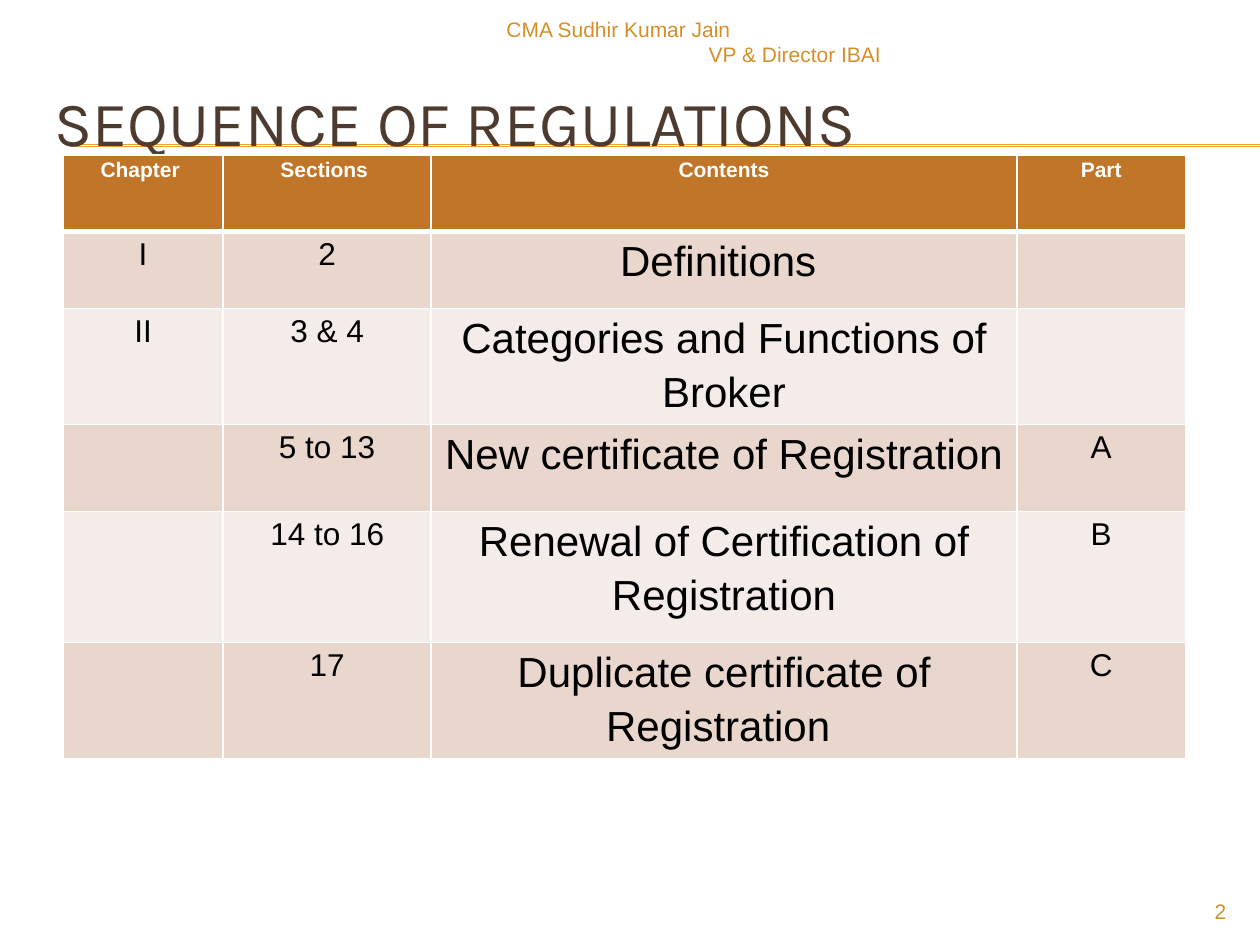
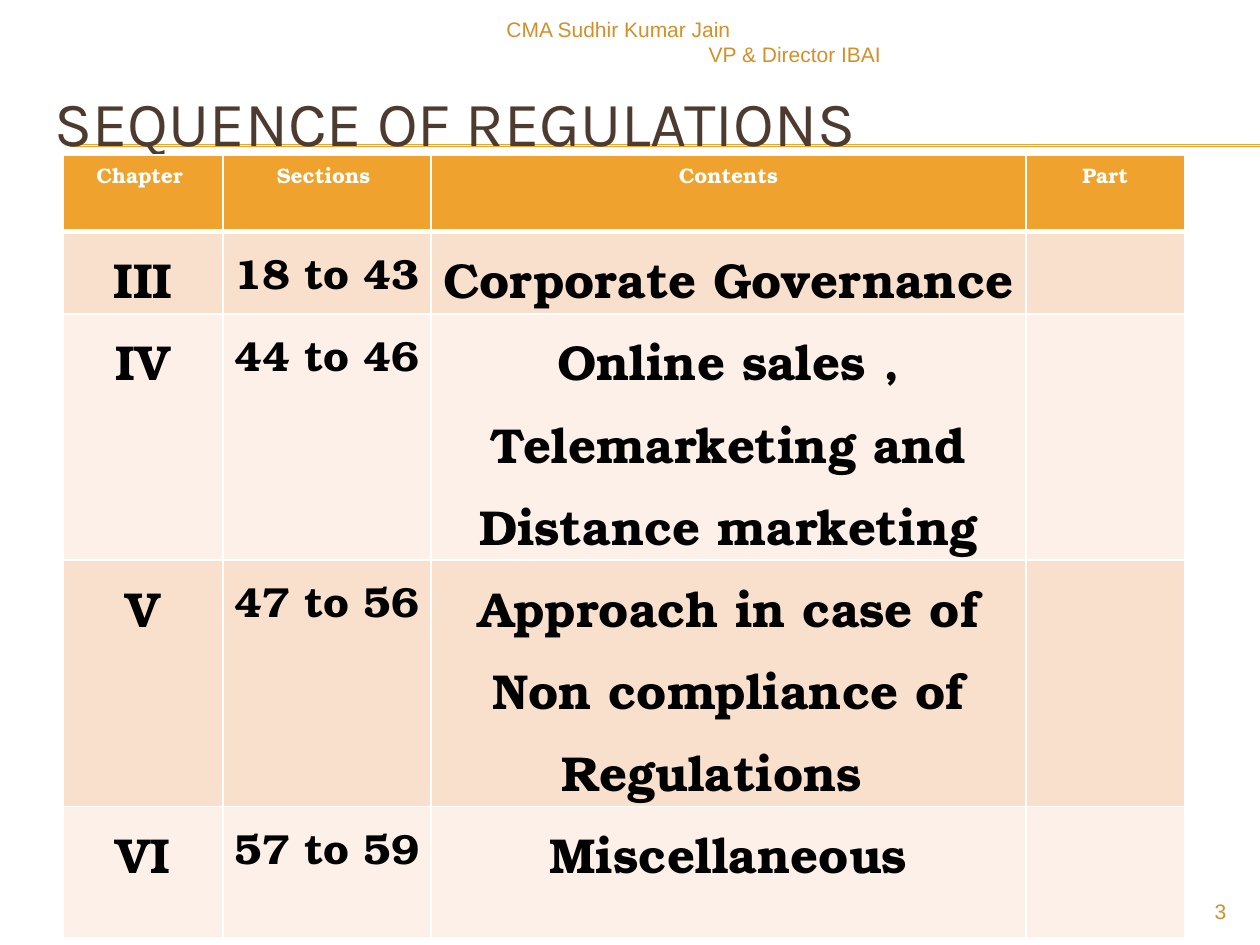
from dataclasses import dataclass

import lxml.etree
import pptx
import pptx.dml.color
import pptx.enum.shapes
import pptx.enum.text
import pptx.oxml.ns
import pptx.util

Cm = pptx.util.Cm
Pt = pptx.util.Pt
Align = pptx.enum.text.PP_ALIGN

COLORS = {
    "title": "4E3B30",
    "rule": "F0A22E",
    "presenter": "D48F29",
    "number": "D38E27",
    "white": "FFFFFF",
    "black": "000000",
    "brown": "C17529",
    "brown_dark_band": "E9D6CD",
    "brown_light_band": "F4ECE8",
    "orange": "F0A22E",
    "orange_dark_band": "F9E0CD",
    "orange_light_band": "FCF0E8",
}
TITLE = "SEQUENCE OF REGULATIONS"
PRESENTER_LINES = (("CMA Sudhir Kumar Jain", Align.LEFT), ("VP & Director IBAI", Align.RIGHT))
HEADINGS = ("Chapter ", "Sections ", "Contents", "Part")
RULE_TOPS = (2.92, 2.95)
HEADER_SIZE = 12
LINE_SPACING = 1.15
CELL_INSET = 0.18


@dataclass(frozen=True)
class TextStyle:
    font: str
    size: float
    color: str
    bold: bool = False


@dataclass(frozen=True)
class RegulationTable:
    number: int
    theme: str
    font: str
    bold: bool
    column_sizes: tuple[int, ...]
    column_widths: tuple[float, ...]
    row_heights: tuple[float, ...]
    rows: tuple[tuple[str, ...], ...]


REGULATION_TABLES = (
    RegulationTable(
        number=2,
        theme="brown",
        font="Arial",
        bold=False,
        column_sizes=(18, 18, 24, 18),
        column_widths=(3.23, 4.19, 11.81, 3.4),
        row_heights=(1.55, 1.55, 2.34, 1.75, 2.64, 2.34),
        rows=(
            ("I", "2", "Definitions ", ""),
            ("II", "3 & 4", "Categories and Functions of Broker", ""),
            ("", "5 to 13", "New certificate of Registration", "A"),
            ("", "14 to 16", "Renewal of Certification of Registration", "B"),
            ("", "17", "Duplicate certificate of Registration ", "C"),
        ),
    ),
    RegulationTable(
        number=3,
        theme="orange",
        font="TeX Gyre Bonum",
        bold=True,
        column_sizes=(28, 24, 28, 18),
        column_widths=(3.23, 4.19, 11.99, 3.2),
        row_heights=(1.55, 1.55, 4.09, 4.09, 2.64),
        rows=(
            ("III", "18 to 43", "Corporate Governance ", ""),
            ("IV", "44 to 46 ", "Online sales , Telemarketing and Distance marketing", ""),
            ("V", "47 to 56", "Approach in case of Non compliance of Regulations  ", ""),
            ("VI", "57 to 59", "Miscellaneous", ""),
        ),
    ),
)


def rgb(name: str) -> pptx.dml.color.RGBColor:
    return pptx.dml.color.RGBColor.from_string(COLORS[name])


def add_run(paragraph, text: str, style: TextStyle, alignment) -> None:
    paragraph.alignment = alignment
    run = paragraph.add_run()
    run.text = text
    run.font.name = style.font
    run.font.size = Pt(style.size)
    run.font.bold = style.bold
    run.font.color.rgb = rgb(style.color)


def add_text_box(slide, left: float, top: float, width: float, height: float, lines, style: TextStyle) -> None:
    frame = slide.shapes.add_textbox(Cm(left), Cm(top), Cm(width), Cm(height)).text_frame
    frame.word_wrap = True
    for index, (text, alignment) in enumerate(lines):
        paragraph = frame.add_paragraph() if index else frame.paragraphs[0]
        add_run(paragraph, text, style, alignment)


def format_title(slide) -> None:
    title = slide.shapes.title
    title.left, title.top, title.width, title.height = Cm(0.84), Cm(1.27), Cm(24.13), Cm(2.34)
    frame = title.text_frame
    frame.auto_size = pptx.enum.text.MSO_AUTO_SIZE.NONE
    frame.vertical_anchor = pptx.enum.text.MSO_ANCHOR.MIDDLE
    add_run(frame.paragraphs[0], TITLE, TextStyle("Karla", 36, "title"), Align.LEFT)


def add_rules(slide) -> None:
    for top in RULE_TOPS:
        rule = slide.shapes.add_connector(
            pptx.enum.shapes.MSO_CONNECTOR.STRAIGHT, Cm(1.42), Cm(top), Cm(25.4), Cm(top)
        )
        rule.line.color.rgb = rgb("rule")
        rule.line.width = Pt(0.75)
        lxml.etree.SubElement(rule._element.spPr, pptx.oxml.ns.qn("a:effectLst"))
        slide.shapes.title._element.addprevious(rule._element)


def add_borders(cell, top: float, bottom: float) -> None:
    properties = cell._tc.get_or_add_tcPr()
    for side, width in (("L", 1), ("R", 1), ("T", top), ("B", bottom)):
        line = lxml.etree.SubElement(properties, pptx.oxml.ns.qn(f"a:ln{side}"), w=str(Pt(width)))
        fill = lxml.etree.SubElement(line, pptx.oxml.ns.qn("a:solidFill"))
        lxml.etree.SubElement(fill, pptx.oxml.ns.qn("a:srgbClr"), val=COLORS["white"])


def format_cell(cell, text: str, style: TextStyle, fill: str, top: float, bottom: float) -> None:
    add_borders(cell, top, bottom)
    cell.fill.solid()
    cell.fill.fore_color.rgb = rgb(fill)
    cell.margin_left = cell.margin_right = Cm(CELL_INSET)
    cell.margin_top = cell.margin_bottom = 0
    if text:
        paragraph = cell.text_frame.paragraphs[0]
        paragraph.line_spacing = LINE_SPACING
        add_run(paragraph, text, style, Align.CENTER)


def add_regulation_table(slide, content: RegulationTable) -> None:
    rows = (HEADINGS, *content.rows)
    table = slide.shapes.add_table(
        len(rows), len(HEADINGS), Cm(1.27), Cm(3.12),
        Cm(sum(content.column_widths)), Cm(sum(content.row_heights)),
    ).table
    for column, width in zip(table.columns, content.column_widths):
        column.width = Cm(width)
    for row, height in zip(table.rows, content.row_heights):
        row.height = Cm(height)

    header_style = TextStyle(content.font, HEADER_SIZE, "white", True)
    for row_index, texts in enumerate(rows):
        band = "dark" if row_index % 2 else "light"
        fill = f"{content.theme}_{band}_band" if row_index else content.theme
        top = 3 if row_index == 1 else 1
        bottom = 3 if row_index == 0 else 1
        for column_index, text in enumerate(texts):
            body_style = TextStyle(content.font, content.column_sizes[column_index], "black", content.bold)
            style = body_style if row_index else header_style
            format_cell(table.cell(row_index, column_index), text, style, fill, top, bottom)


def add_regulation_slide(presentation, content: RegulationTable) -> None:
    slide = presentation.slides.add_slide(presentation.slide_layouts.get_by_name("Title Only"))
    format_title(slide)
    add_rules(slide)
    add_regulation_table(slide, content)
    add_text_box(slide, 9.96, 0.2, 8.05, 0.81, PRESENTER_LINES, TextStyle("Arial", 12, "presenter"))
    number_line = ((str(content.number), Align.RIGHT),)
    add_text_box(slide, 22.86, 17.98, 2.11, 0.69, number_line, TextStyle("Arial", 12, "number"))


def main() -> None:
    presentation = pptx.Presentation()
    presentation.slide_width = Cm(25.4)
    presentation.slide_height = Cm(19.05)
    for content in REGULATION_TABLES:
        add_regulation_slide(presentation, content)
    presentation.save("out.pptx")


if __name__ == "__main__":
    main()
